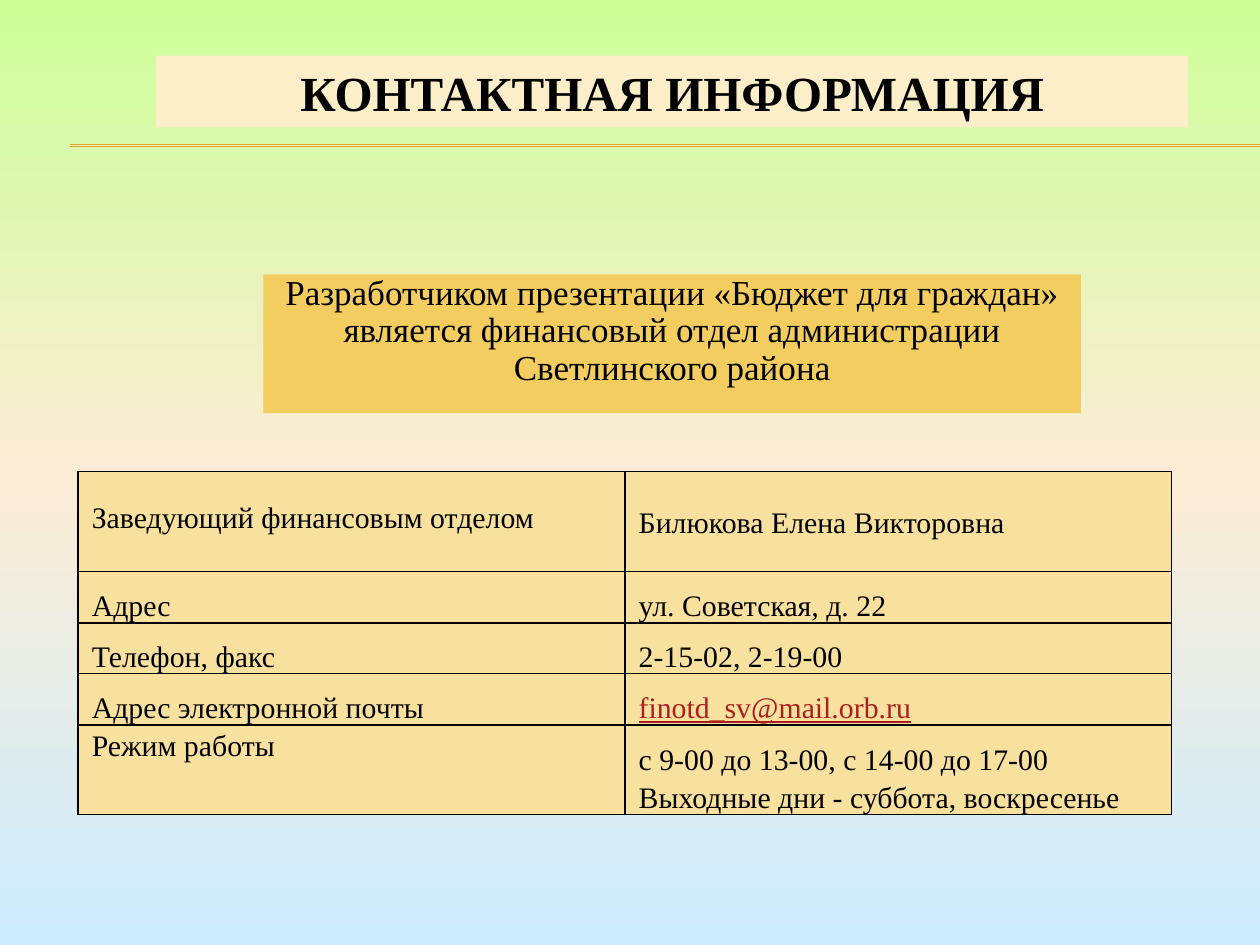
import copy

import pptx
import pptx.dml.color
import pptx.enum.shapes
import pptx.enum.text
import pptx.oxml
import pptx.oxml.ns
import pptx.util

Cm = pptx.util.Cm
Pt = pptx.util.Pt
ANCHOR = pptx.enum.text.MSO_ANCHOR
CENTER = pptx.enum.text.PP_ALIGN.CENTER
BLACK = "000000"
NO_MARGINS = {f"margin_{side}": 0 for side in ("left", "top", "right", "bottom")}
BODY_SPACING = Pt(21.6)

CONTACTS = [
    ("Заведующий финансовым отделом", "Билюкова Елена Викторовна"),
    ("Адрес", "ул. Советская, д. 22"),
    ("Телефон, факс", "2-15-02, 2-19-00"),
    ("Адрес электронной почты", "finotd_sv@mail.orb.ru"),
    ("Режим работы",
     "с 9-00 до 13-00, с 14-00 до 17-00\vВыходные дни - суббота, воскресенье"),
]
ROW_HEIGHTS = [2.02, 1.04, 1.02, 1.04, 1.8]
# Cells that depart from the common format, by (row, column)
CELL_FORMATS = {
    (0, 0): {"margin_bottom": Cm(0.74)},
    (0, 1): {"vertical_anchor": ANCHOR.MIDDLE},
    (4, 0): {"vertical_anchor": ANCHOR.TOP},
}
FONT_FORMATS = {(3, 1): {"color": "AD1F1F", "underline": True}}


def rgb(value):
    return pptx.dml.color.RGBColor.from_string(value)


def apply(obj, formats):
    for name, value in formats.items():
        setattr(obj, name, value)


def write(tf, text, size, color=BLACK, para=None, **font):
    p = tf.paragraphs[0]
    p.text = text
    apply(p, para or {})
    for r in p.runs:
        apply(r.font, {"name": "Times New Roman", "size": Pt(size), **font})
        r.font.color.rgb = rgb(color)


def paint_background(slide, colors):
    """Fill the slide from top to bottom with evenly spaced colours."""
    fill = slide.background.fill
    fill.gradient()
    fill.gradient_angle = 270
    stops = next(slide.element.iter(pptx.oxml.ns.qn("a:gsLst")))
    while len(stops) < len(colors):
        stops.append(copy.deepcopy(stops[0]))
    for i, (stop, color) in enumerate(zip(fill.gradient_stops, colors)):
        stop.color.rgb = rgb(color)
        stop.position = i / (len(colors) - 1)


def add_rule(slide, left, top, width):
    """Draw the double line under the title."""
    for y in (top, top + Cm(0.03)):
        line = slide.shapes.add_connector(
            pptx.enum.shapes.MSO_CONNECTOR.STRAIGHT, left, y, left + width, y)
        line.line.color.rgb = rgb("F0A22E")
        line.line.width = Pt(0.75)
        line.element.spPr.append(pptx.oxml.parse_xml(
            f'<a:effectLst {pptx.oxml.ns.nsdecls("a")}/>'))


def add_panel(slide, box, fill, frame):
    """Add a plain filled rectangle and return its text frame."""
    sp = slide.shapes.add_shape(pptx.enum.shapes.MSO_SHAPE.RECTANGLE, *box)
    sp.shadow.inherit = False
    sp.fill.solid()
    sp.fill.fore_color.rgb = rgb(fill)
    sp.line.fill.background()
    apply(sp.text_frame, {"word_wrap": True, **frame})
    return sp.text_frame


def add_title(slide, *box):
    tf = add_panel(slide, box, "FBEEC9", {"vertical_anchor": ANCHOR.MIDDLE})
    write(tf, "КОНТАКТНАЯ ИНФОРМАЦИЯ", 28, para={"alignment": CENTER}, bold=True)


def add_developer(slide, *box):
    tf = add_panel(slide, box, "F3CD60",
                   {**NO_MARGINS, "vertical_anchor": ANCHOR.TOP})
    write(tf, "Разработчиком презентации «Бюджет для граждан» является "
              "финансовый отдел администрации Светлинского района", 20,
          para={"alignment": CENTER, "line_spacing": BODY_SPACING})


def add_borders(cell):
    tc_pr = cell._tc.get_or_add_tcPr()
    for side in "LRTB":
        tc_pr.append(pptx.oxml.parse_xml(
            f'<a:ln{side} {pptx.oxml.ns.nsdecls("a")} w="{Pt(1)}"><a:solidFill>'
            f'<a:srgbClr val="{BLACK}"/></a:solidFill></a:ln{side}>'))


def add_contacts(slide, left, top, width):
    height = Cm(sum(ROW_HEIGHTS))
    table = slide.shapes.add_table(
        len(CONTACTS), 2, left, top, width, height).table
    apply(table, {"first_row": False, "horz_banding": False})
    for i, row in enumerate(CONTACTS):
        table.rows[i].height = Cm(ROW_HEIGHTS[i])
        for j, text in enumerate(row):
            cell = table.cell(i, j)
            apply(cell, {**NO_MARGINS, "margin_left": Cm(0.28),
                         "vertical_anchor": ANCHOR.BOTTOM,
                         **CELL_FORMATS.get((i, j), {})})
            add_borders(cell)
            cell.fill.solid()
            cell.fill.fore_color.rgb = rgb("F8E19F")
            write(cell.text_frame, text, 17,
                  para={"line_spacing": BODY_SPACING},
                  **FONT_FORMATS.get((i, j), {}))


def main():
    prs = pptx.Presentation()
    apply(prs, {"slide_width": Cm(25.4), "slide_height": Cm(19.05)})
    slide = prs.slides.add_slide(prs.slide_layouts[6])
    paint_background(slide, ["CCFF99", "FCECD5", "CCECFF"])
    add_rule(slide, Cm(1.42), Cm(2.92), Cm(23.98))
    add_developer(slide, Cm(5.31), Cm(5.53), Cm(16.48), Cm(2.8))
    add_contacts(slide, Cm(1.57), Cm(9.5), Cm(22.05))
    add_title(slide, Cm(3.15), Cm(1.12), Cm(20.8), Cm(1.45))
    prs.save("out.pptx")


if __name__ == "__main__":
    main()
